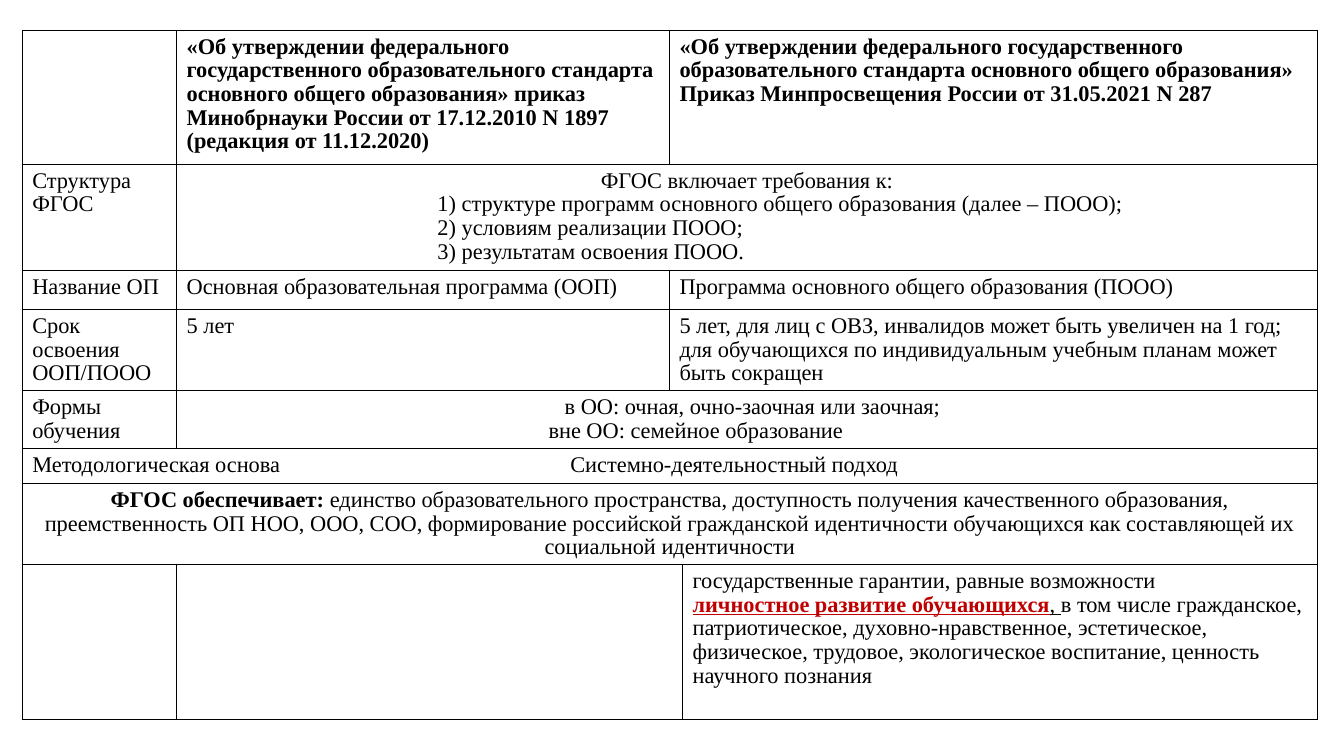
import pptx
import pptx.util
import pptx.dml.color
import pptx.enum.text
import pptx.oxml
import pptx.oxml.ns

Cm = pptx.util.Cm
CENTER = pptx.enum.text.PP_ALIGN.CENTER
JUSTIFY = pptx.enum.text.PP_ALIGN.JUSTIFY

COLUMN_WIDTHS = [3.89, 12.42, 0.33, 16]
ROW_HEIGHTS = [3.38, 2.67, 0.99, 2.04, 1.45, 0.89, 2.04, 3.91]
BODY = {"name": "Times New Roman", "size": pptx.util.Pt(16), "bold": False}
BOLD = {"bold": True}
ACCENT = {"bold": True, "underline": True}

CONTENT = [
    (0, 1, 1, [{"spans": [("«Об утверждении федерального государственного образовательного "
                           "стандарта основного общего образования» приказ Минобрнауки России "
                           "от 17.12.2010 N 1897 (редакция от 11.12.2020)", BOLD)]}]),
    (0, 2, 2, [{"spans": [("«Об утверждении федерального государственного образовательного "
                           "стандарта основного общего образования» Приказ Минпросвещения "
                           "России от 31.05.2021 N 287", BOLD)]}]),
    (1, 0, 1, [{"text": "Структура ФГОС", "alignment": JUSTIFY}]),
    (1, 1, 3, [{"text": "ФГОС включает требования к:", "alignment": CENTER}] + [
        {"text": f"{number}) {item}", "alignment": JUSTIFY, "indent": 6.32}
        for number, item in enumerate([
            "структуре программ основного общего образования (далее – ПООО);",
            "условиям реализации ПООО;",
            "результатам освоения ПООО."], 1)]),
    (2, 0, 1, [{"text": "Название ОП"}]),
    (2, 1, 1, [{"text": "Основная образовательная программа (ООП)"}]),
    (2, 2, 2, [{"text": "Программа основного общего образования (ПООО)"}]),
    (3, 0, 1, [{"text": "Срок освоения ООП/ПООО"}]),
    (3, 1, 1, [{"text": "5 лет"}]),
    (3, 2, 2, [{"text": "5 лет, для лиц с ОВЗ, инвалидов может быть увеличен на 1 год; "
                        "для обучающихся по индивидуальным учебным планам может быть сокращен"}]),
    (4, 0, 1, [{"text": "Формы обучения"}]),
    (4, 1, 3, [{"text": "в ОО: очная, очно-заочная или заочная;", "alignment": CENTER,
                "indent": 0.28},
               {"text": "вне ОО: семейное образование", "alignment": JUSTIFY, "indent": 9.12}]),
    (5, 0, 4, [{"text": "Методологическая основа\tСистемно-деятельностный подход", "tab": 13.56}]),
    (6, 0, 4, [{"alignment": CENTER, "spans": [
        ("ФГОС обеспечивает: ", BOLD),
        ("единство образовательного пространства, доступность получения качественного "
         "образования, преемственность ОП НОО, ООО, СОО, формирование российской гражданской "
         "идентичности обучающихся как составляющей их социальной идентичности", {})]}]),
    (7, 1, 2, []),
    (7, 3, 1, [{"text": "государственные гарантии, равные возможности"},
               {"spans": [("личностное развитие обучающихся", ACCENT, "C00000"),
                          (", ", {"underline": True}),
                          ("в том числе гражданское, патриотическое, духовно-нравственное, "
                           "эстетическое, физическое, трудовое, экологическое воспитание, "
                           "ценность научного познания", {})]}]),
]


def paint(target, color):
    """Give a solid fill or a font colour from a hex string."""
    target.rgb = pptx.dml.color.RGBColor.from_string(color)


def add_span(para, text, changes, color="000000"):
    """Add a formatted run to a paragraph."""
    span = para.add_run()
    span.text = text
    for name, value in {**BODY, **changes}.items():
        setattr(span.font, name, value)
    paint(span.font.color, color)


def write_paragraph(para, content):
    """Write one paragraph with its alignment, indent and tab stop."""
    para.line_spacing = 0.95
    para.alignment = content.get("alignment")
    properties = para._p.get_or_add_pPr()
    if "indent" in content:
        properties.set("marL", str(Cm(content["indent"])))
    if "tab" in content:
        properties.append(pptx.oxml.parse_xml(
            f'<a:tabLst {pptx.oxml.ns.nsdecls("a")}>'
            f'<a:tab pos="{Cm(content["tab"])}" algn="l"/></a:tabLst>'))
    for span in content.get("spans") or [(content["text"], {})]:
        add_span(para, *span)


def style_cell(cell):
    """Fill a cell with white and draw thin black borders."""
    properties = cell._tc.get_or_add_tcPr()
    for side in ("lnL", "lnR", "lnT", "lnB"):
        properties.append(pptx.oxml.parse_xml(
            f'<a:{side} {pptx.oxml.ns.nsdecls("a")} w="{pptx.util.Pt(1)}">'
            f'<a:solidFill><a:srgbClr val="000000"/></a:solidFill></a:{side}>'))
    cell.fill.solid()
    paint(cell.fill.fore_color, "FFFFFF")


def add_grid(page):
    """Add the empty comparison table with its column and row sizes."""
    table = page.shapes.add_table(
        len(ROW_HEIGHTS), len(COLUMN_WIDTHS), Cm(0.56), Cm(0.76),
        Cm(sum(COLUMN_WIDTHS)), Cm(sum(ROW_HEIGHTS))).table
    for column, width in zip(table.columns, COLUMN_WIDTHS):
        column.width = Cm(width)
    for row, height in zip(table.rows, ROW_HEIGHTS):
        row.height = Cm(height)
    for cell in table.iter_cells():
        style_cell(cell)
    return table


def fill_cell(table, row, column, width, paragraphs):
    """Merge a cell across its columns and write its paragraphs."""
    cell = table.cell(row, column)
    if width > 1:
        cell.merge(table.cell(row, column + width - 1))
    frame = cell.text_frame
    for index, content in enumerate(paragraphs):
        write_paragraph(frame.add_paragraph() if index else frame.paragraphs[0], content)


def main():
    """Build the slide that compares the two standards."""
    deck = pptx.Presentation()
    deck.slide_width, deck.slide_height = Cm(33.87), Cm(19.05)
    page = deck.slides.add_slide(deck.slide_layouts[6])
    table = add_grid(page)
    for entry in CONTENT:
        fill_cell(table, *entry)
    deck.save("out.pptx")


if __name__ == "__main__":
    main()
